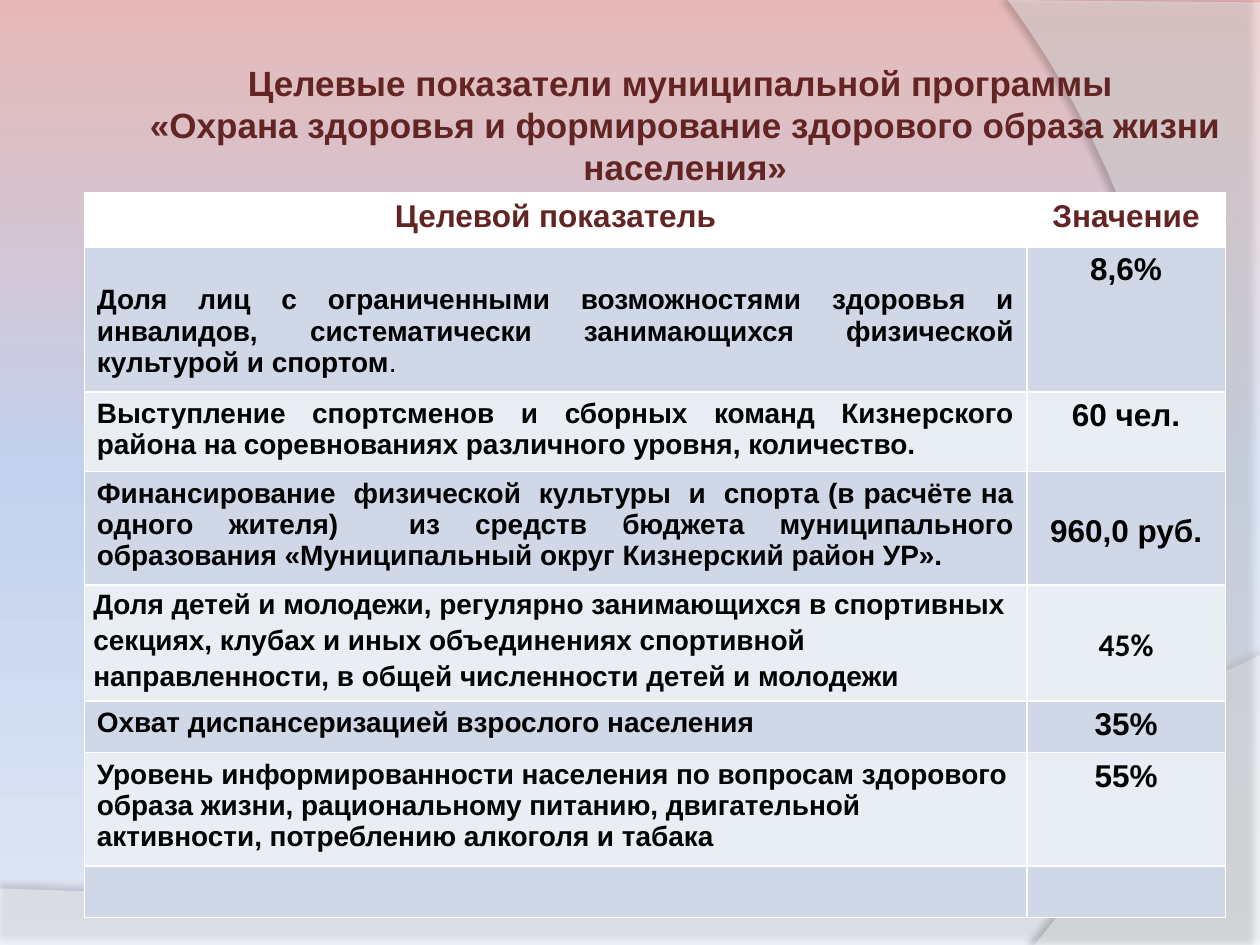
from dataclasses import dataclass

from lxml.etree import SubElement
from pptx import Presentation
from pptx.dml.color import RGBColor
from pptx.enum.text import MSO_ANCHOR, MSO_AUTO_SIZE, PP_ALIGN
from pptx.oxml import parse_xml
from pptx.oxml.ns import nsdecls, qn
from pptx.util import Cm, Pt


@dataclass(frozen=True)
class Theme:
    font: str = "Arial"
    alt_font: str = "Calibri"
    accent: str = "632523"
    text: str = "000000"
    white: str = "FFFFFF"
    bands: tuple = ("D0D8E8", "E9EDF4")
    sky: tuple = ((0, "E6B9B8"), (50, "C2D1ED"), (100, "E1E8F5"))
    title: int = 20
    value: int = 18
    body: int = 16


T = Theme()
WIDTH, HEIGHT = 25.4, 19.05
LEFT, CENTER, JUSTIFY = PP_ALIGN.LEFT, PP_ALIGN.CENTER, PP_ALIGN.JUSTIFY
TIGHT = {"margin_left": 0.18, "margin_right": 0.18, "margin_top": 0, "margin_bottom": 0}

TITLE = ("Целевые показатели муниципальной программы ",
         "«Охрана здоровья и формирование здорового образа жизни населения»")
HEADER = ("Целевой показатель", "Значение")
ROWS = (
    (2.92, JUSTIFY, "Доля лиц с ограниченными возможностями здоровья и инвалидов, "
     "систематически занимающихся физической культурой и спортом", "8,6%"),
    (1.61, JUSTIFY, "Выступление спортсменов и сборных команд Кизнерского района "
     "на соревнованиях различного уровня, количество.", "60 чел."),
    (2.28, JUSTIFY, "Финансирование  физической  культуры  и  спорта (в расчёте на "
     "одного жителя)  из средств бюджета муниципального образования "
     "«Муниципальный округ Кизнерский район УР».", "960,0 руб."),
    (2.32, LEFT, "Доля детей и молодежи, регулярно занимающихся в спортивных секциях, "
     "клубах и иных объединениях спортивной направленности, в общей численности "
     "детей и молодежи", "45%"),
    (1.04, LEFT, "Охват диспансеризацией взрослого населения", "35%"),
    (2.28, LEFT, "Уровень информированности населения по вопросам здорового образа "
     "жизни, рациональному питанию, двигательной активности, потреблению алкоголя "
     "и табака", "55%"),
    (1.04, LEFT, "", ""),
)


def add_run(p, text, size, color, bold=True, font=T.font):
    r = p.add_run()
    r.text = text
    r.font.size = Pt(size)
    r.font.name = font
    r.font.bold = bold
    r.font.color.rgb = RGBColor.from_string(color)


def set_background(s):
    fill = s.background.fill
    fill.gradient()
    fill.gradient_angle = 270
    stops = s.background._cSld.find(".//" + qn("a:gsLst"))
    for stop in list(stops):
        stops.remove(stop)
    for pos, color in T.sky:
        gs = SubElement(stops, qn("a:gs"), pos=str(pos * 1000))
        SubElement(gs, qn("a:srgbClr"), val=color)


def curve(p0, p1, p2, p3, steps=40):
    points = []
    for i in range(1, steps + 1):
        t = i / steps
        u = 1 - t
        points.append(tuple(u**3 * a + 3 * u * u * t * b + 3 * u * t * t * c + t**3 * d
                            for a, b, c, d in zip(p0, p1, p2, p3)))
    return points


def add_wave(s, points, opacity, shade, distance, direction):
    points = [(Cm(x), Cm(y)) for x, y in points]
    fb = s.shapes.build_freeform(*points[0])
    fb.add_line_segments(points[1:], close=True)
    sp = fb.convert_to_shape()
    sp.fill.solid()
    sp.fill.fore_color.rgb = RGBColor.from_string(T.white)
    sp.line.fill.background()
    color = sp._element.spPr.find(qn("a:solidFill"))[0]
    SubElement(color, qn("a:alpha"), val=str(opacity * 1000))
    sp._element.spPr.append(parse_xml(
        f'<a:effectLst {nsdecls("a")}><a:outerShdw blurRad="{Pt(4)}" dist="{Pt(distance)}" '
        f'dir="{direction * 60000}" algn="ctr" rotWithShape="0"><a:srgbClr val="000000">'
        f'<a:alpha val="{shade * 1000}"/></a:srgbClr></a:outerShdw></a:effectLst>'))
    return sp


def add_waves(s):
    low = [(0, 17.91), (0, HEIGHT), (WIDTH, HEIGHT), (WIDTH, 13.21)]
    low += curve(low[-1], (14.2, 18.52), (9.93, 18.26), low[0])
    side = [(WIDTH, 0.05), (WIDTH, HEIGHT), (20.85, HEIGHT)]
    side += curve(side[-1], (23.75, 15.72), (25.86, 7.62), (20.32, 0))
    waves = (add_wave(s, low, 45, 35, 3.5, 270), add_wave(s, side, 40, 45, 4, 180))
    for i, sp in enumerate(waves):
        s.shapes._spTree.insert(2 + i, sp._element)


def set_title(s):
    sp = s.shapes.title
    sp.left, sp.top, sp.width, sp.height = Cm(1.09), Cm(1.12), Cm(25.45), Cm(1.96)
    tf = sp.text_frame
    tf.word_wrap = True
    tf.auto_size = MSO_AUTO_SIZE.SHAPE_TO_FIT_TEXT
    tf.vertical_anchor = MSO_ANCHOR.TOP
    for i, line in enumerate(TITLE):
        p = tf.add_paragraph() if i else tf.paragraphs[0]
        p.alignment = CENTER
        p.line_spacing = 1.0
        p.space_before = Pt(0)
        add_run(p, line, T.title, T.accent)


def set_borders(cell, bottom=1):
    tcPr = cell._tc.get_or_add_tcPr()
    for i, (side, width) in enumerate((("L", 1), ("R", 1), ("T", 1), ("B", bottom))):
        tcPr.insert(i, parse_xml(
            f'<a:ln{side} {nsdecls("a")} w="{Pt(width)}"><a:solidFill>'
            f'<a:srgbClr val="{T.white}"/></a:solidFill></a:ln{side}>'))


def fill_cell(cell, text, size, color, align, back, font=T.font, bottom=1):
    cell.fill.solid()
    cell.fill.fore_color.rgb = RGBColor.from_string(back)
    set_borders(cell, bottom)
    p = cell.text_frame.paragraphs[0]
    p.alignment = align
    if text:
        add_run(p, text, size, color, font=font)
    return p


def set_margins(cell, **margins):
    for name, value in margins.items():
        setattr(cell, name, Cm(value))


def add_indicators(s):
    heights = [1.07] + [row[0] for row in ROWS]
    frame = s.shapes.add_table(len(heights), 2, Cm(1.7), Cm(3.89), Cm(23), Cm(sum(heights)))
    table = frame.table
    table.first_row = table.horz_banding = False
    for col, width in zip(table.columns, (19, 4)):
        col.width = Cm(width)
    for row, height in zip(table.rows, heights):
        row.height = Cm(height)
    for i, text in enumerate(HEADER):
        fill_cell(table.cell(0, i), text, T.value, T.accent, CENTER, T.white, bottom=3)
    for i, (_, align, name, value) in enumerate(ROWS, 1):
        back = T.bands[(i - 1) % 2]
        share = i == 4
        p = fill_cell(table.cell(i, 0), name, T.body, T.text, align, back)
        q = fill_cell(table.cell(i, 1), value, T.value, T.text, CENTER, back,
                      T.alt_font if share else T.font)
        if i == 1:
            add_run(p, ".", T.body, T.text, bold=False)
        if share:
            p.line_spacing = q.line_spacing = 1.15
            set_margins(table.cell(i, 0), **TIGHT)
            set_margins(table.cell(i, 1), **TIGHT)
            table.cell(i, 1).vertical_anchor = MSO_ANCHOR.MIDDLE
    set_margins(table.cell(1, 0), margin_top=0.78)
    set_margins(table.cell(3, 1), margin_top=0.86)


def main():
    prs = Presentation()
    prs.slide_width, prs.slide_height = Cm(WIDTH), Cm(HEIGHT)
    s = prs.slides.add_slide(prs.slide_layouts[5])
    set_background(s)
    add_waves(s)
    set_title(s)
    add_indicators(s)
    prs.save("out.pptx")


if __name__ == "__main__":
    main()
